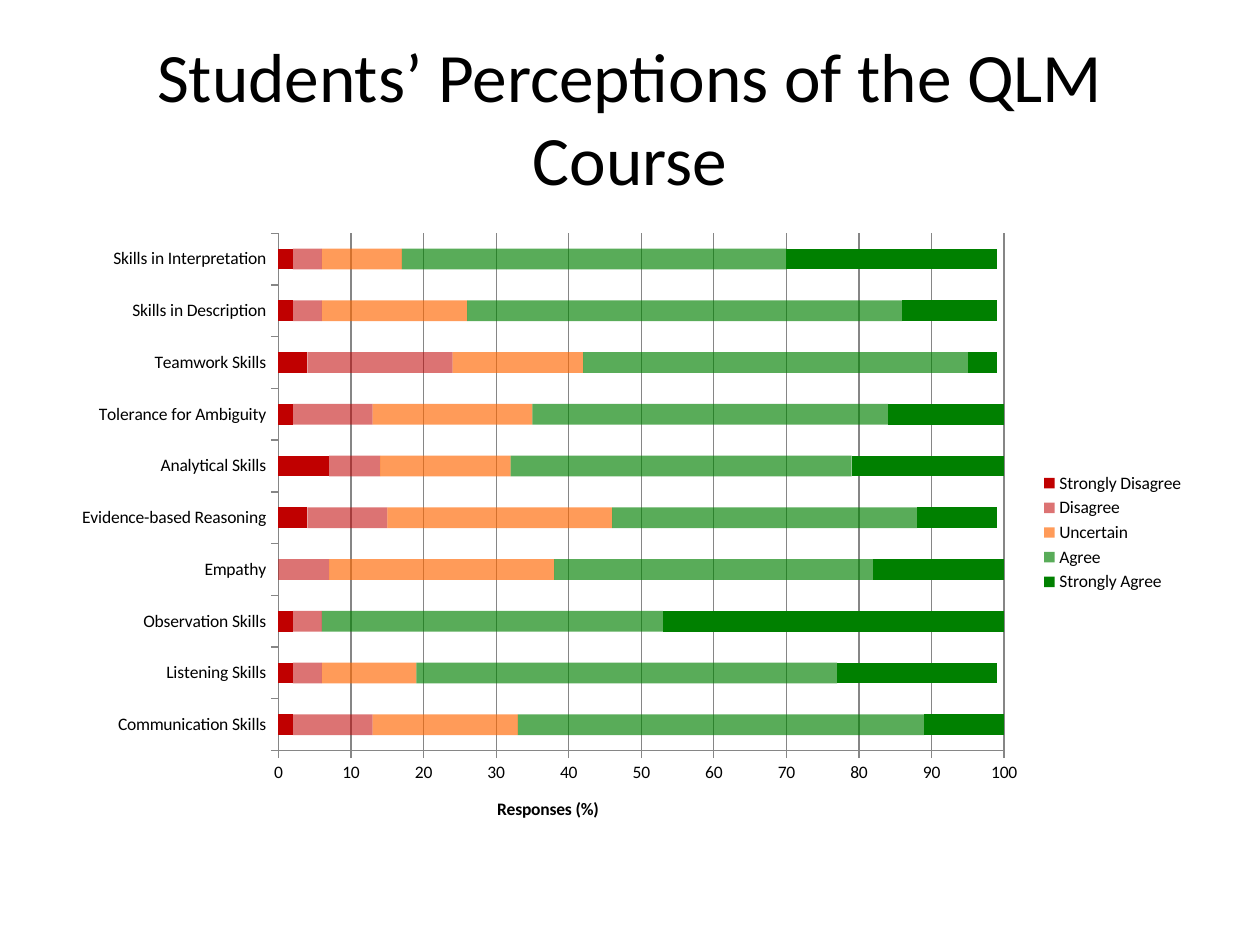
from pptx import Presentation
from pptx.chart.data import CategoryChartData as Data
from pptx.dml.color import RGBColor as Rgb
from pptx.enum.chart import XL_CHART_TYPE as Kind, XL_LEGEND_POSITION as Spot, XL_TICK_MARK as Tick
from pptx.enum.text import MSO_ANCHOR as Anchor, PP_ALIGN as Align
from pptx.oxml import parse_xml
from pptx.oxml.ns import nsdecls, qn
from pptx.util import Cm, Pt
from lxml.etree import SubElement

HUES = {"text": "000000", "grid": "868686", "red": "C00000", "orange": "FF6600", "green": "008000"}
SKILLS = ["Communication Skills", "Listening Skills", "Observation Skills", "Empathy",
          "Evidence-based Reasoning", "Analytical Skills", "Tolerance for Ambiguity",
          "Teamwork Skills", "Skills in Description", "Skills in Interpretation"]
VOTES = [
    ("Strongly Disagree", "red", 100, (2, 2, 2, 0, 4, 7, 2, 4, 2, 2)),
    ("Disagree", "red", 55, (11, 4, 4, 7, 11, 7, 11, 20, 4, 4)),
    ("Uncertain", "orange", 65, (20, 13, 0, 31, 31, 18, 22, 18, 20, 11)),
    ("Agree", "green", 65, (56, 58, 47, 44, 42, 47, 49, 53, 60, 53)),
    ("Strongly Agree", "green", 100, (11, 22, 47, 18, 11, 22, 16, 4, 13, 29)),
]


class Deck:
    """Holds the style and the current slide."""

    def __init__(self, face="Calibri"):
        self.face = face
        self.prs = Presentation()
        self.prs.slide_width, self.prs.slide_height = Cm(25.4), Cm(19.05)
        self.slide = self.prs.slides.add_slide(self.prs.slide_layouts[6])

    def hue(self, name):
        return Rgb.from_string(HUES[name])

    def style(self, font, size, bold=False):
        font.name, font.size, font.bold = self.face, Pt(size), bold
        font.color.rgb = self.hue("text")

    def title(self, text, box, size):
        frame = self.slide.shapes.add_textbox(*map(Cm, box)).text_frame
        frame.word_wrap = True
        frame.vertical_anchor = Anchor.MIDDLE
        frame.text = text
        line = frame.paragraphs[0]
        line.alignment = Align.CENTER
        self.style(line.runs[0].font, size)

    def place(self, node, index, **spots):
        for old in node.findall(qn("c:layout")):
            node.remove(old)
        layout = parse_xml(f"<c:layout {nsdecls('c')}/>")
        manual = SubElement(layout, qn("c:manualLayout"))
        if "w" in spots:
            SubElement(manual, qn("c:layoutTarget")).set("val", "inner")
        for key in "xy":
            SubElement(manual, qn(f"c:{key}Mode")).set("val", "edge")
        for key, val in spots.items():
            SubElement(manual, qn(f"c:{key}")).set("val", str(val))
        node.insert(index, layout)

    def rule(self, line):
        line.color.rgb = self.hue("grid")
        line.width = Pt(0.75)

    def axis(self, axis):
        axis.major_tick_mark, axis.minor_tick_mark = Tick.OUTSIDE, Tick.NONE
        self.rule(axis.format.line)

    def bars(self, cats, rows, box, label):
        data = Data(number_format="0")
        data.categories = cats
        for name, _, _, vals in rows:
            data.add_series(name, vals)
        chart = self.slide.shapes.add_chart(Kind.BAR_STACKED, *map(Cm, box), data).chart
        self.style(chart.font, 10)
        chart.has_title = False
        chart.has_legend = True
        chart.legend.position = Spot.RIGHT
        chart.legend.include_in_layout = False
        plot = chart.plots[0]
        plot.vary_by_categories = False
        plot.gap_width, plot.overlap = 150, 100
        for series, (_, hue, _, _) in zip(plot.series, rows):
            series.invert_if_negative = False
            series.format.fill.solid()
            series.format.fill.fore_color.rgb = self.hue(hue)
        for clr, (_, _, alpha, _) in zip(chart.element.xpath(".//c:ser//a:srgbClr"), rows):
            if alpha < 100:
                SubElement(clr, qn("a:alpha")).set("val", str(alpha * 1000))
        scale = chart.value_axis
        scale.minimum_scale, scale.maximum_scale, scale.major_unit = 0, 100, 10
        scale.has_major_gridlines = True
        self.rule(scale.major_gridlines.format.line)
        self.axis(scale)
        self.axis(chart.category_axis)
        frame = scale.axis_title.text_frame
        frame.text = label
        self.style(frame.paragraphs[0].runs[0].font, 10, True)
        self.place(scale.axis_title.element, 1, x=0.38, y=0.92)
        area = chart.element.xpath(".//c:plotArea")[0]
        self.place(area, 0, x=0.19, y=0.02, w=0.64, h=0.83)

    def save(self):
        self.prs.save("out.pptx")


def main():
    deck = Deck()
    deck.title("Students’ Perceptions of the QLM Course", (1.27, 0.76, 22.86, 3.18), 39.6)
    deck.bars(SKILLS, VOTES, (1.27, 4.45, 22.86, 12.57), "Responses (%)")
    deck.save()


if __name__ == "__main__":
    main()
